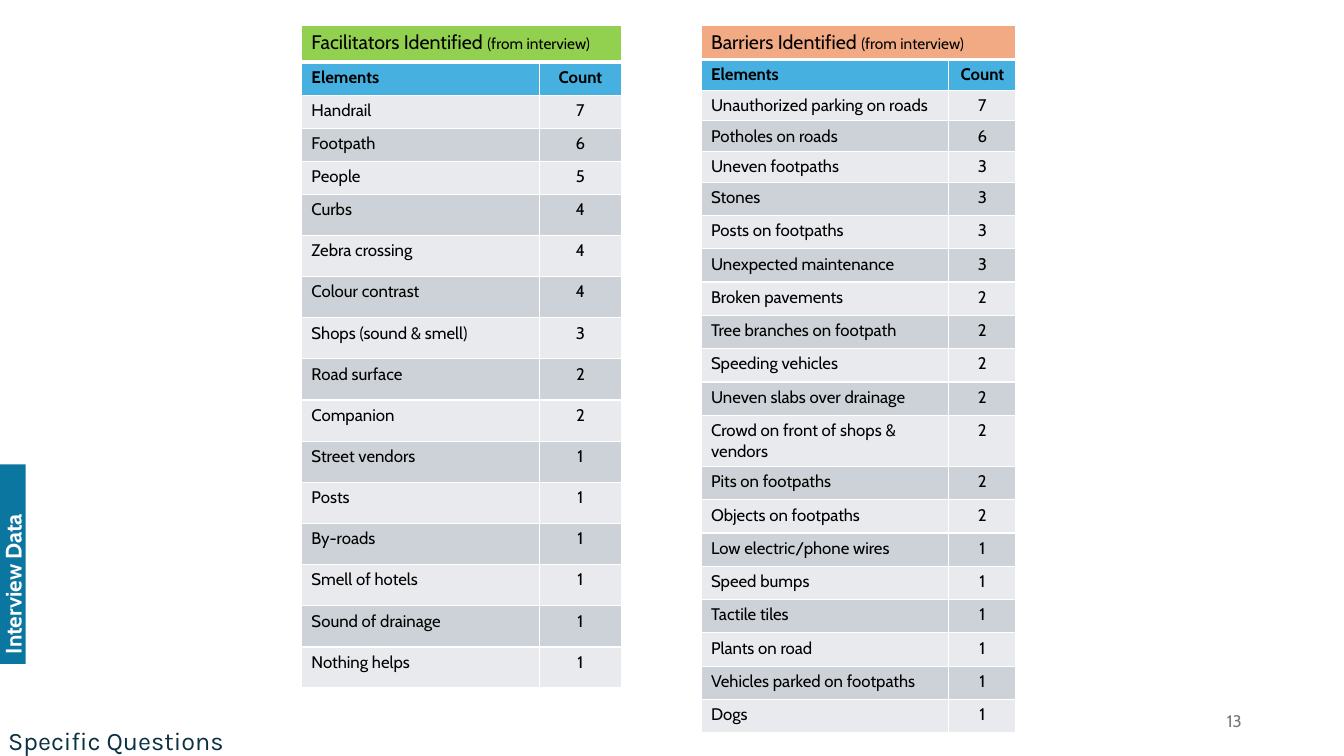
import pptx
import pptx.dml.color
import pptx.enum.shapes
import pptx.enum.text
import pptx.oxml
import pptx.oxml.ns
import pptx.util

Pt = pptx.util.Pt
ALIGN = pptx.enum.text.PP_ALIGN
ANCHOR = pptx.enum.text.MSO_ANCHOR

COLOURS = {
    "facilitators": "92D050",
    "barriers": "F2AA84",
    "header": "46B1E1",
    "light_band": "E8EAED",
    "dark_band": "CCD2D8",
    "side_tab": "0B76A0",
    "heading": "0B3142",
    "page_number": "797979",
    "black": "000000",
    "white": "FFFFFF",
}

FACILITATORS = [
    ("Handrail", 7), ("Footpath", 6), ("People", 5), ("Curbs", 4),
    ("Zebra crossing", 4), ("Colour contrast", 4),
    ("Shops (sound & smell)", 3), ("Road surface", 2), ("Companion", 2),
    ("Street vendors", 1), ("Posts", 1), ("By-roads", 1),
    ("Smell of hotels", 1), ("Sound of drainage", 1), ("Nothing helps", 1),
]
BARRIERS = [
    ("Unauthorized parking on roads", 7), ("Potholes on roads", 6),
    ("Uneven footpaths", 3), ("Stones", 3), ("Posts on footpaths", 3),
    ("Unexpected maintenance", 3), ("Broken pavements", 2),
    ("Tree branches on footpath", 2), ("Speeding vehicles", 2),
    ("Uneven slabs over drainage", 2),
    ("Crowd on front of shops & vendors", 2), ("Pits on footpaths", 2),
    ("Objects on footpaths", 2), ("Low electric/phone wires", 1),
    ("Speed bumps", 1), ("Tactile tiles", 1), ("Plants on road", 1),
    ("Vehicles parked on footpaths", 1), ("Dogs", 1),
]
FACILITATOR_HEIGHTS = [26.1] + [23.6] * 4 + [29.4] * 12
BARRIER_HEIGHTS = [24.2] + [21.8] * 4 + [23.8] * 7 + [36.4] + [23.8] * 8


def colour(name):
    return pptx.dml.color.RGBColor.from_string(COLOURS[name])


def add_span(para, text, size, ink="black", bold=False, font="Cabin"):
    span = para.add_run()
    span.text = text
    span.font.name = font
    span.font.size = Pt(size)
    span.font.bold = bold
    span.font.color.rgb = colour(ink)


def style_cell(cell, fill, bottom_width=1):
    """Give the cell white borders and a solid fill."""
    properties = cell._tc.get_or_add_tcPr()
    for side in "LRTB":
        width = Pt(bottom_width if side == "B" else 1)
        properties.append(pptx.oxml.parse_xml(
            f'<a:ln{side} {pptx.oxml.ns.nsdecls("a")} w="{width}"><a:solidFill>'
            f'<a:srgbClr val="{COLOURS["white"]}"/></a:solidFill></a:ln{side}>'))
    cell.fill.solid()
    cell.fill.fore_color.rgb = colour(fill)


def add_count_table(page, left, top, column_widths, row_heights, name, title_fill, counts):
    table = page.shapes.add_table(
        len(row_heights), 2, Pt(left), Pt(top),
        Pt(sum(column_widths)), Pt(sum(row_heights))).table
    table.horz_banding = False
    for column, width in zip(table.columns, column_widths):
        column.width = Pt(width)
    for row, height in zip(table.rows, row_heights):
        row.height = Pt(height)

    for column in range(2):
        style_cell(table.cell(0, column), title_fill, bottom_width=3)
    title = table.cell(0, 0)
    title.merge(table.cell(0, 1))
    para = title.text_frame.paragraphs[0]
    add_span(para, f"{name} Identified ", 14)
    add_span(para, "(from interview)", 11)

    for index, entry in enumerate([("Elements", "Count")] + counts):
        is_header = index == 0
        fill = "header" if is_header else "light_band" if index % 2 else "dark_band"
        for column, value in enumerate(entry):
            cell = table.cell(index + 1, column)
            style_cell(cell, fill)
            para = cell.text_frame.paragraphs[0]
            para.alignment = ALIGN.CENTER if column else ALIGN.LEFT
            add_span(para, str(value), 12, bold=is_header)


def add_heading(page, left, top, width, height):
    heading = page.shapes.title
    heading.left, heading.top = Pt(left), Pt(top)
    heading.width, heading.height = Pt(width), Pt(height)
    frame = heading.text_frame
    frame.word_wrap = True
    frame.auto_size = pptx.enum.text.MSO_AUTO_SIZE.NONE
    frame.vertical_anchor = ANCHOR.TOP
    para = frame.paragraphs[0]
    para.alignment = ALIGN.LEFT
    add_span(para, "Specific Questions", 18, "heading", font="Karla")


def add_page_number(page, left, top, width, height):
    box = page.shapes.add_textbox(Pt(left), Pt(top), Pt(width), Pt(height))
    box.text_frame.word_wrap = True
    box.text_frame.vertical_anchor = ANCHOR.MIDDLE
    para = box.text_frame.paragraphs[0]
    para.alignment = ALIGN.RIGHT
    add_span(para, "13", 12, "page_number")


def add_side_tab(page, left, top, width, height):
    """Place the section tab, turned to read upwards, in the upright box given."""
    tab = page.shapes.add_shape(
        pptx.enum.shapes.MSO_SHAPE.RECTANGLE,
        Pt(left + (width - height) / 2), Pt(top + (height - width) / 2),
        Pt(height), Pt(width))
    tab.rotation = 270
    tab.shadow.inherit = False
    tab.fill.solid()
    tab.fill.fore_color.rgb = colour("side_tab")
    tab.line.fill.background()
    tab.text_frame.word_wrap = True
    tab.text_frame.vertical_anchor = ANCHOR.MIDDLE
    para = tab.text_frame.paragraphs[0]
    para.alignment = ALIGN.LEFT
    add_span(para, "Interview Data", 16, "white", bold=True)


def main():
    deck = pptx.Presentation()
    deck.slide_width, deck.slide_height = Pt(960), Pt(540)
    page = deck.slides.add_slide(deck.slide_layouts[5])
    add_heading(page, -1.4, 514.8, 305.3, 28.8)
    add_count_table(page, 500.7, 18.3, (177, 48), BARRIER_HEIGHTS,
                    "Barriers", "barriers", BARRIERS)
    add_page_number(page, 678.2, 500.4, 216, 28.8)
    add_side_tab(page, 0, 331.6, 18.3, 142.6)
    add_count_table(page, 215.3, 18.3, (170, 58.6), FACILITATOR_HEIGHTS,
                    "Facilitators", "facilitators", FACILITATORS)
    deck.save("out.pptx")


if __name__ == "__main__":
    main()
